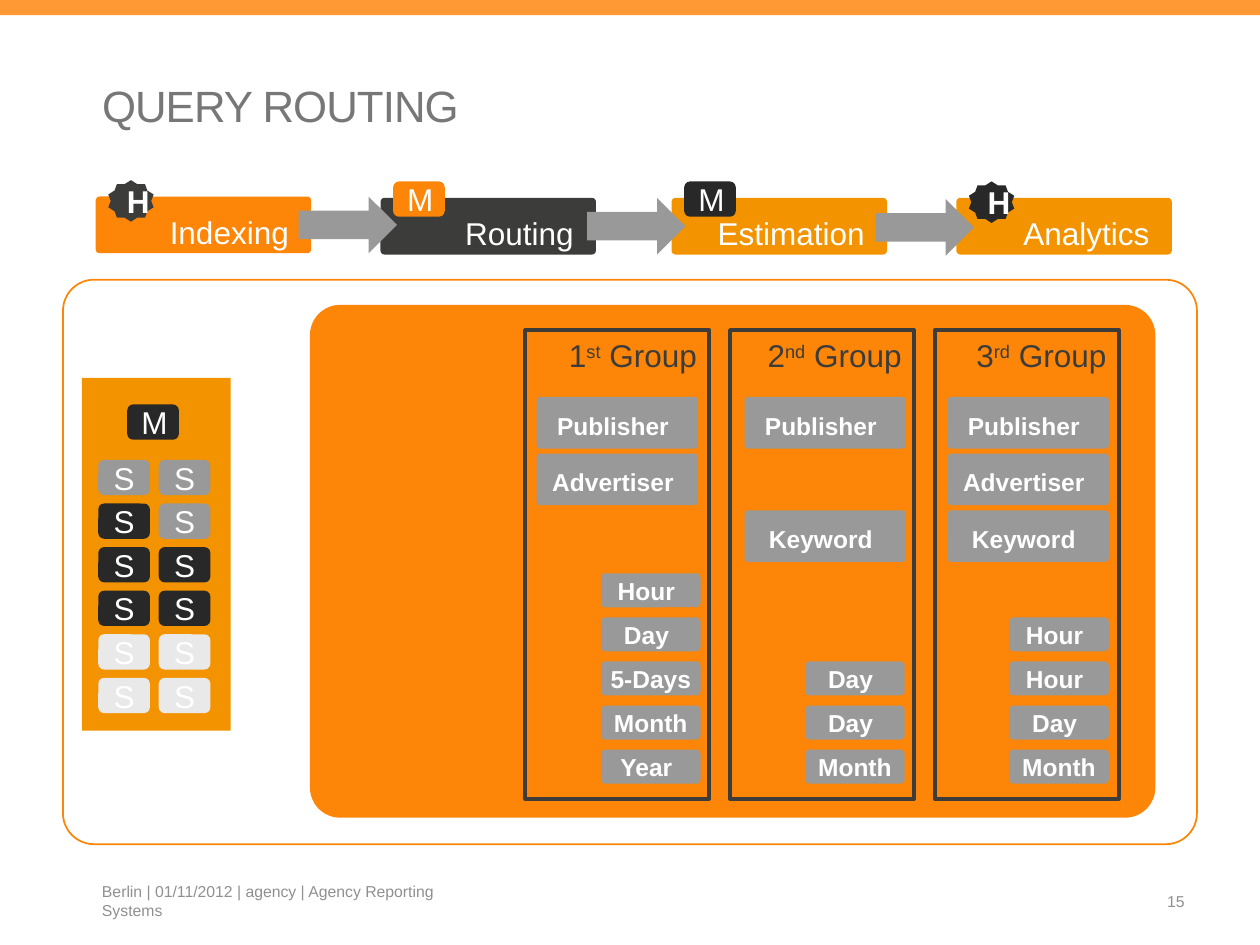
from pptx import Presentation
from pptx.dml.color import RGBColor
from pptx.enum.shapes import MSO_SHAPE as Kind
from pptx.enum.text import MSO_ANCHOR, MSO_AUTO_SIZE, PP_ALIGN
from pptx.util import Inches, Pt

ORANGE, AMBER, DARK, BLACK = "FD8608", "F39300", "3C3C3B", "282828"
GREY, PALE, WHITE, NOTE = "999999", "E9E9E9", "FFFFFF", "8F918E"
LEFT, MID, RIGHT = PP_ALIGN.LEFT, PP_ALIGN.CENTER, PP_ALIGN.RIGHT

# Content
TITLE = "QUERY ROUTING"
FOOT = "Berlin | 01/11/2012 | agency | Agency Reporting Systems"
PAGE = "15"
# label, left, top, fill, badge letter, badge fill
STEPS = [
    ("Indexing ", 0.76, 1.56, ORANGE, "H", DARK),
    ("Routing ", 3.02, 1.57, DARK, "M", ORANGE),
    ("Estimation ", 5.33, 1.57, AMBER, "M", BLACK),
    ("Analytics ", 7.59, 1.57, AMBER, "H", BLACK),
]
ARROWS = [(2.37, 1.56), (4.66, 1.57), (6.95, 1.58)]
# fills of the left and right server in each row
SERVERS = [(GREY, GREY), (BLACK, GREY), (BLACK, BLACK),
           (BLACK, BLACK), (PALE, PALE), (PALE, PALE)]
# number, ending, left of the fields, {row: field}, {row: period}
GROUPS = [
    ("1", "st", 4.26, {0: "Publisher", 1: "Advertiser"},
     {0: "Hour", 1: "Day", 2: "5-Days", 3: "Month", 4: "Year"}),
    ("2", "nd", 5.91, {0: "Publisher", 2: "Keyword"},
     {2: "Day", 3: "Day", 4: "Month"}),
    ("3", "rd", 7.52, {0: "Publisher", 1: "Advertiser", 2: "Keyword"},
     {1: "Hour", 2: "Hour", 3: "Day", 4: "Month"}),
]


def color(code):
    return RGBColor.from_string(code)


def style(font, size, code, bold=False):
    font.name, font.size, font.bold = "Arial", Pt(size), bold
    font.color.rgb = color(code)


def inset(frame, sides):
    (frame.margin_left, frame.margin_top,
     frame.margin_right, frame.margin_bottom) = map(Inches, sides)


def box(kind, place, fill=None, line=None, width=1, adj=None):
    shape = slide.shapes.add_shape(kind, *map(Inches, place))
    shape.shadow.inherit = False
    if fill:
        shape.fill.solid()
        shape.fill.fore_color.rgb = color(fill)
    else:
        shape.fill.background()
    if line:
        shape.line.color.rgb = color(line)
        shape.line.width = Pt(width)
    else:
        shape.line.fill.background()
    if adj is not None:
        shape.adjustments[0] = adj
    return shape


def write(shape, text, size=18, code=WHITE, align=MID, bold=False,
          sides=(0.1, 0.05, 0.1, 0.05), anchor=MSO_ANCHOR.MIDDLE):
    frame = shape.text_frame
    frame.word_wrap = True
    frame.vertical_anchor = anchor
    inset(frame, sides)
    para = frame.paragraphs[0]
    para.alignment = align
    para.add_run().text = text
    style(para.font, size, code, bold)
    return para


def badge(text, left, top, fill):
    write(box(Kind.ROUNDED_RECTANGLE, (left, top, 0.41, 0.28), fill), text)


def star(text, left, top, fill):
    write(box(Kind.STAR_10_POINT, (left, top, 0.36, 0.33), fill), text, bold=True)


def pill(text, place, adj, sides):
    shape = box(Kind.ROUNDED_RECTANGLE, place, GREY, adj=adj)
    para = write(shape, text, 14, bold=True, sides=sides)
    gap = para.add_run()
    gap.text = " "
    style(gap.font, 18, WHITE)


def label(text, place, align, sides):
    write(slide.shapes.add_textbox(*map(Inches, place)), text, 9, NOTE, align, sides=sides)


deck = Presentation()
deck.slide_width, deck.slide_height = Inches(10), Inches(7.5)
slide = deck.slides.add_slide(deck.slide_layouts[5])

# Frame and panels
box(Kind.RECTANGLE, (0, 0, 10, 0.12), "FF9933")
box(Kind.ROUNDED_RECTANGLE, (0.5, 2.22, 9, 4.48), line=ORANGE, adj=0.055)
box(Kind.RECTANGLE, (0.65, 3, 1.18, 2.8), AMBER)
box(Kind.ROUNDED_RECTANGLE, (2.46, 2.42, 6.71, 4.07), ORANGE, adj=0.059)

# Title and footer
head = slide.shapes.title
head.left, head.top, head.width, head.height = map(Inches, (0.5, 0.63, 7.09, 1.59))
head.text_frame.auto_size = MSO_AUTO_SIZE.NONE
para = write(head, TITLE, 25, "767776", LEFT, sides=(0.31, 0.05, 0.1, 0.05),
             anchor=MSO_ANCHOR.TOP)
para.line_spacing = Pt(26)
para.runs[0].font._element.set("spc", "-50")
label(PAGE, (7.17, 6.95, 2.33, 0.4), RIGHT, (0.1, 0.05, 0.1, 0.05))
label(FOOT, (0.81, 6.95, 3.17, 0.4), LEFT, (0, 0.05, 0.1, 0.05))

# Server rack: one master above two columns of slaves
badge("M", 1.01, 3.21, BLACK)
for row, pair in enumerate(SERVERS):
    for col, fill in enumerate(pair):
        badge("S", 0.78 + 0.48 * col, 3.65 + 0.346 * row, fill)

# Process steps
for text, left, top, fill, mark, tone in STEPS:
    bar = box(Kind.ROUNDED_RECTANGLE, (left, top, 1.71, 0.45), fill, adj=0.069)
    write(bar, text, align=RIGHT, sides=(0.1, 0.16, 0.1, 0.05))
    (star if mark == "H" else badge)(mark, left + 0.1, top - 0.13, tone)
for left, top in ARROWS:
    box(Kind.RIGHT_ARROW, (left, top, 0.78, 0.45), GREY)

# Index groups
for col, (num, end, left, fields, spans) in enumerate(GROUPS):
    edge = 4.17 + 1.625 * col
    frame = box(Kind.RECTANGLE, (edge, 2.62, 1.46, 3.72), line=DARK, width=2.25)
    para = write(frame, num, code=DARK, align=RIGHT, anchor=MSO_ANCHOR.TOP)
    high = para.add_run()
    high.text = end
    high.font._element.set("baseline", "30000")
    para.add_run().text = " Group"
    for row, text in fields.items():
        pill(text, (left, 3.15 + 0.45 * row, 1.28, 0.41), 0.069, (0.1, 0.04, 0.1, 0.04))
    for row, text in spans.items():
        side = 0.04 if text == "5-Days" else 0.08
        pill(text, (4.77 + 1.62 * col, 4.55 + 0.35 * row, 0.79, 0.27), 0.126,
             (side, 0.04, side, 0.08))

deck.save("out.pptx")
